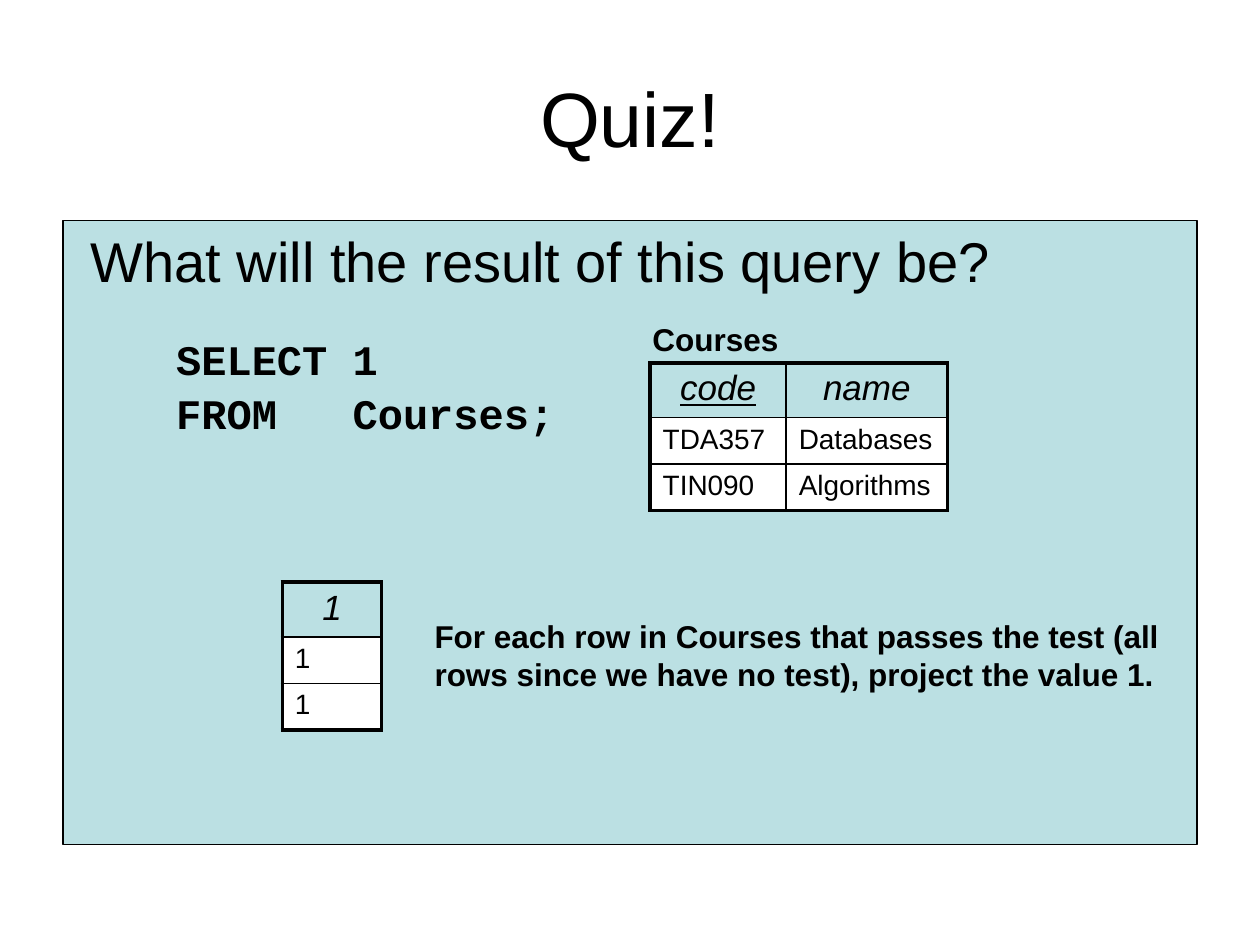
from pptx import Presentation
from pptx.dml.color import RGBColor
from pptx.enum.shapes import MSO_SHAPE
from pptx.enum.text import MSO_ANCHOR, PP_ALIGN
from pptx.oxml.ns import qn
from pptx.util import Inches, Pt
from lxml import etree

RECTANGLE = MSO_SHAPE.RECTANGLE
TOP, MIDDLE = MSO_ANCHOR.TOP, MSO_ANCHOR.MIDDLE
LEFT, CENTER = PP_ALIGN.LEFT, PP_ALIGN.CENTER

THEME = {
    "ink": "000000", "panel": "BBE0E3", "paper": "FFFFFF",
    "sans": "Arial", "mono": "Courier New",
    "title": 44, "question": 32, "code": 24, "header": 20, "note": 18, "cell": 16,
    "outer_border": 2.25, "inner_border": 1, "panel_border": 0.75,
}

TITLE = "Quiz!"
QUESTION = "What will the result of this query be?"
QUERY = "SELECT 1\vFROM   Courses;"
EXPLANATION = ("For each row in Courses that passes the test (all rows since "
               "we have no test), project the value 1.")
COURSES = {
    "name": "Courses", "key": "code", "at": (5.16, 2.88), "widths": (1.08, 1.28),
    "rows": [("code", "name"), ("TDA357", "Databases"), ("TIN090", "Algorithms")],
}
RESULT = {"key": None, "at": (2.24, 4.62), "widths": (0.79,),
          "rows": [("1",), ("1",), ("1",)]}
HEADER_HEIGHT, ROW_HEIGHT = 0.43, 0.37


def color(role):
    return RGBColor.from_string(THEME[role])


def style_text(frame, size, font="sans", align=LEFT, **flags):
    for paragraph in frame.paragraphs:
        paragraph.alignment = align
        for run in paragraph.runs:
            run.font.name = THEME[font]
            run.font.size = Pt(THEME[size])
            run.font.color.rgb = color("ink")
            for flag, value in flags.items():
                setattr(run.font, flag, value)


def add_label(slide, text, box, size, font="sans"):
    frame = slide.shapes.add_textbox(*map(Inches, box)).text_frame
    frame.word_wrap = True
    frame.text = text
    style_text(frame, size, font, bold=True)
    return frame


def set_borders(cell, outer_sides):
    """Draw all four edges, thick on the sides at the table's rim."""
    properties = cell._tc.get_or_add_tcPr()
    for position, side in enumerate("LRTB"):
        weight = THEME["outer_border" if side in outer_sides else "inner_border"]
        line = etree.Element(qn(f"a:ln{side}"), w=str(Pt(weight)))
        fill = etree.SubElement(line, qn("a:solidFill"))
        etree.SubElement(fill, qn("a:srgbClr"), val=THEME["ink"])
        properties.insert(position, line)


def add_relation(slide, relation):
    rows, widths = relation["rows"], relation["widths"]
    heights = [HEADER_HEIGHT] + [ROW_HEIGHT] * (len(rows) - 1)
    box = (*relation["at"], sum(widths), sum(heights))
    table = slide.shapes.add_table(len(rows), len(widths), *map(Inches, box)).table
    table.first_row = table.horz_banding = False
    for column, width in zip(table.columns, widths):
        column.width = Inches(width)
    for r, values in enumerate(rows):
        table.rows[r].height = Inches(heights[r])
        for c, value in enumerate(values):
            cell = table.cell(r, c)
            cell.text = value
            cell.fill.solid()
            if r == 0:
                cell.fill.fore_color.rgb = color("panel")
                style_text(cell.text_frame, "header", align=CENTER, italic=True,
                           underline=value == relation["key"])
            else:
                cell.fill.fore_color.rgb = color("paper")
                style_text(cell.text_frame, "cell")
            rim = {"L": c == 0, "R": c == len(widths) - 1,
                   "T": r == 0, "B": r == len(rows) - 1}
            set_borders(cell, [side for side, at_rim in rim.items() if at_rim])


def add_title(slide):
    title = slide.shapes.title
    title.left, title.top, title.width, title.height = map(Inches, (0.5, 0.3, 9, 1.25))
    title.text_frame.text = TITLE
    title.text_frame.vertical_anchor = MIDDLE
    style_text(title.text_frame, "title", align=CENTER)


def add_question_panel(slide):
    panel = slide.shapes.add_shape(RECTANGLE, *map(Inches, (0.5, 1.75, 9, 4.95)))
    panel.shadow.inherit = False
    panel.fill.solid()
    panel.fill.fore_color.rgb = color("panel")
    panel.line.color.rgb = color("ink")
    panel.line.width = Pt(THEME["panel_border"])
    frame = panel.text_frame
    frame.text = QUESTION
    frame.vertical_anchor = TOP
    frame.margin_left = Inches(0.22)
    style_text(frame, "question")


def main():
    presentation = Presentation()
    presentation.slide_width, presentation.slide_height = Inches(10), Inches(7.5)
    slide = presentation.slides.add_slide(presentation.slide_layouts[5])
    add_title(slide)
    add_question_panel(slide)
    query = add_label(slide, QUERY, (1.3, 2.57, 7.8, 0.9), "code", "mono")
    query.paragraphs[0].line_spacing = 1.07
    add_relation(slide, COURSES)
    add_label(slide, COURSES["name"], (5.08, 2.49, 2.36, 0.4), "note")
    add_relation(slide, RESULT)
    add_label(slide, EXPLANATION, (3.35, 4.85, 5.98, 0.7), "note")
    presentation.save("out.pptx")


if __name__ == "__main__":
    main()
